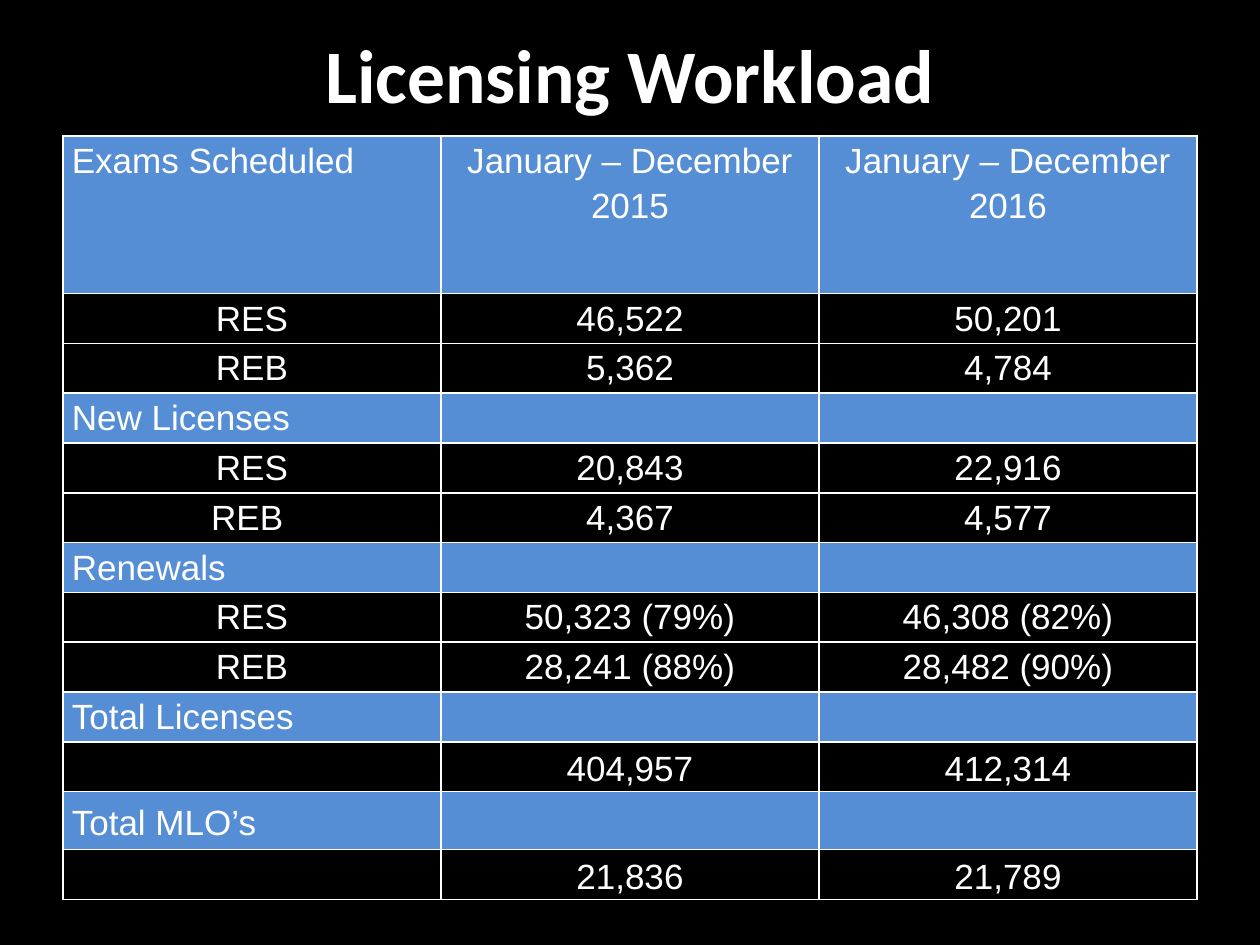
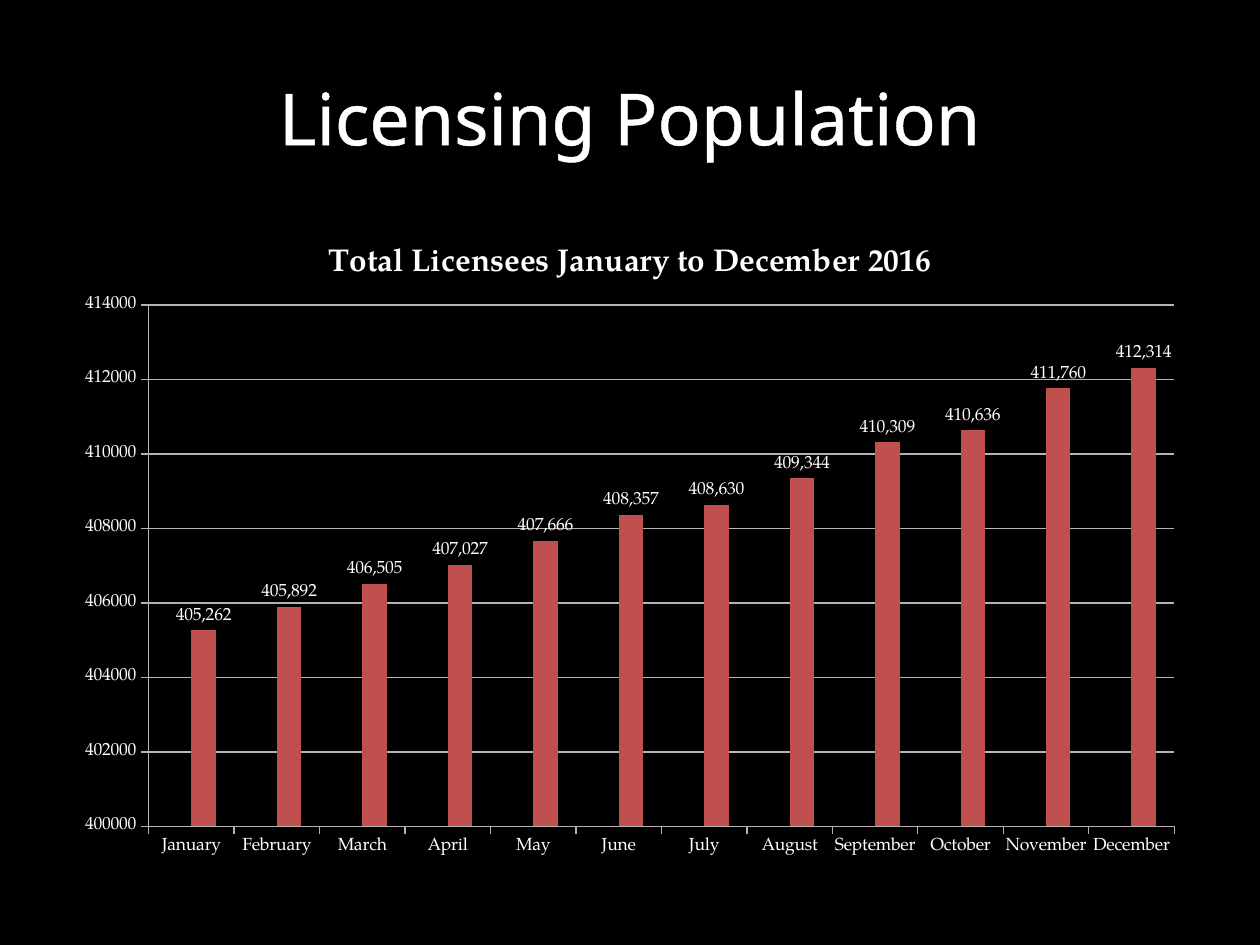
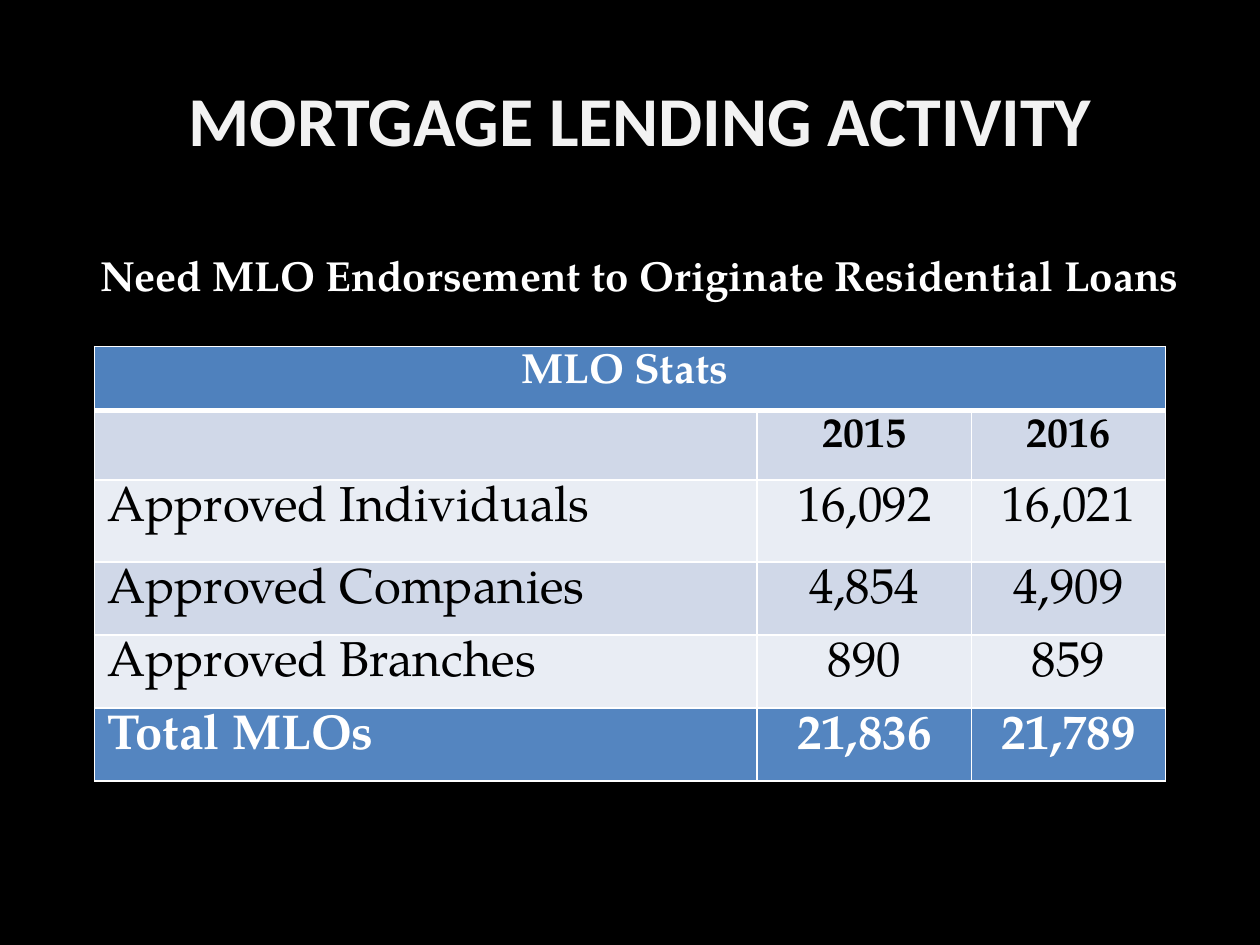
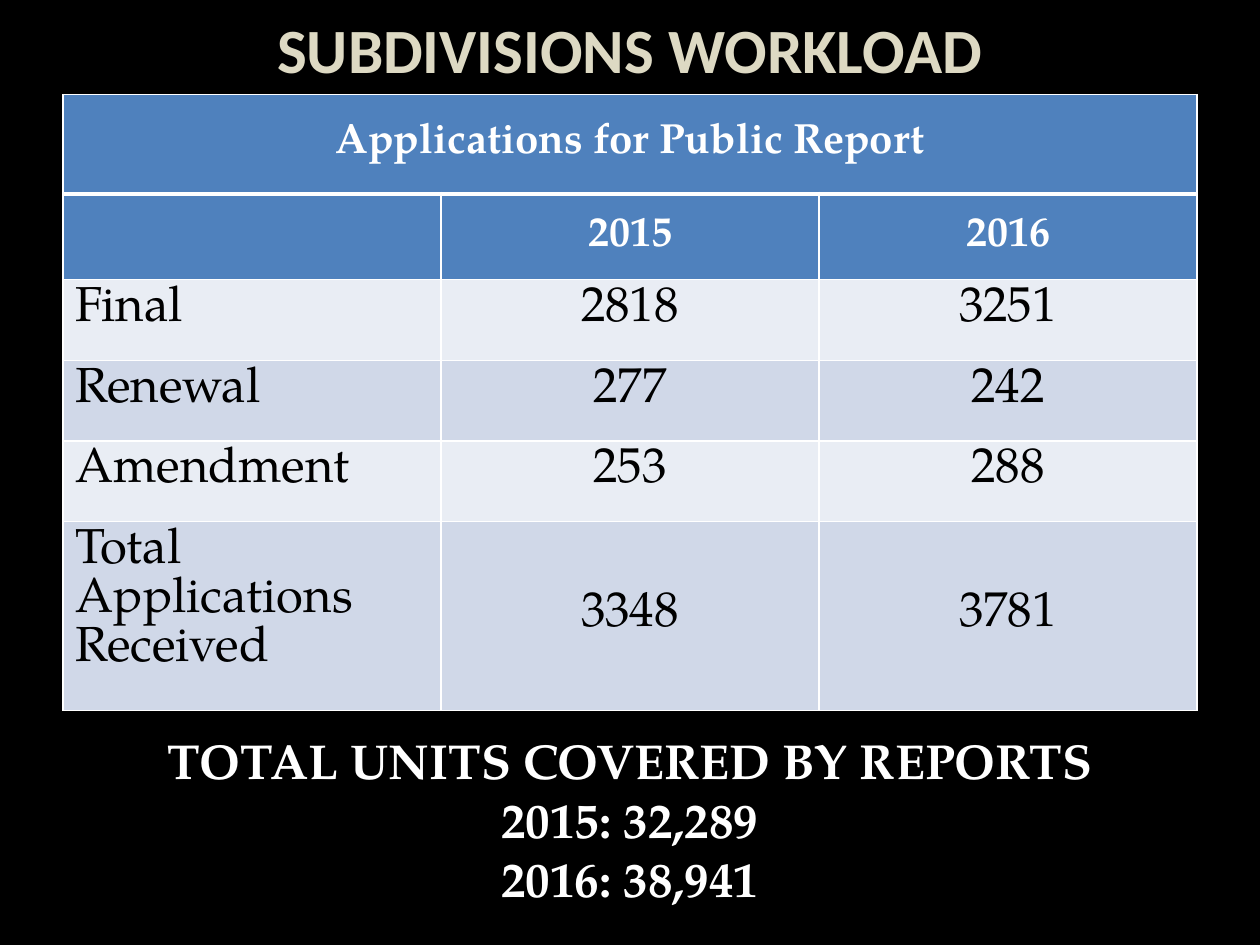
from dataclasses import dataclass, replace
from lxml import etree
from pptx import Presentation
from pptx.chart.data import CategoryChartData
from pptx.dml.color import RGBColor
from pptx.enum.chart import XL_CHART_TYPE, XL_LABEL_POSITION, XL_TICK_MARK
from pptx.enum.text import MSO_ANCHOR, MSO_AUTO_SIZE, PP_ALIGN
from pptx.oxml import parse_xml
from pptx.oxml.ns import nsdecls, qn
from pptx.util import Inches, Pt

BLACK = RGBColor(0x00, 0x00, 0x00)
WHITE = RGBColor(0xFF, 0xFF, 0xFF)
OFF_WHITE = RGBColor(0xF2, 0xF2, 0xF2)
TAN = RGBColor(0xDD, 0xD9, 0xC3)
SKY = RGBColor(0x55, 0x8E, 0xD5)
BLUE = RGBColor(0x4F, 0x81, 0xBD)
TOTAL_BLUE = RGBColor(0x54, 0x85, 0xC0)
BAND_DARK = RGBColor(0xD0, 0xD8, 0xE8)
BAND_LIGHT = RGBColor(0xE9, 0xED, 0xF4)
RED = RGBColor(0xC0, 0x50, 0x4D)
GRID = RGBColor(0xB3, 0xB3, 0xB3)

HEAD, SANS, SERIF = "Calibri", "Arial", "TeX Gyre Pagella"
LEFT, CENTER = PP_ALIGN.LEFT, PP_ALIGN.CENTER
TOP, MIDDLE = MSO_ANCHOR.TOP, MSO_ANCHOR.MIDDLE


@dataclass
class RowStyle:
    """Look of one table row; the label is its first cell."""
    fill: RGBColor = None
    size: float = 28
    color: RGBColor = BLACK
    bold: bool = False
    font: str = SERIF
    spacing: float = 1.0
    margins: tuple = (0.1, 0.05)
    label_align: int = LEFT
    label_anchor: int = TOP
    anchor: int = TOP


class Deck:
    def __init__(self):
        self.prs = Presentation()
        self.prs.slide_width, self.prs.slide_height = Inches(10), Inches(7.5)
        bg = self.prs.slide_master.background.fill
        bg.solid()
        bg.fore_color.rgb = BLACK
        self.s = None

    def slide(self):
        self.s = self.prs.slides.add_slide(self.prs.slide_layouts[6])

    def run(self, p, text, size, font, color, bold):
        r = p.add_run()
        r.text = text
        r.font.size, r.font.name, r.font.bold = Pt(size), font, bold
        r.font.color.rgb = color
        return r

    def text(self, box, lines, size, font=SERIF, color=WHITE, bold=True, anchor=TOP):
        sp = self.s.shapes.add_textbox(*map(Inches, box))
        tf = sp.text_frame
        tf.word_wrap, tf.vertical_anchor = True, anchor
        for i, line in enumerate(lines):
            p = tf.add_paragraph() if i else tf.paragraphs[0]
            p.alignment = CENTER
            self.run(p, line, size, font, color, bold)
        return tf

    def title(self, box, text, size, font=HEAD, color=WHITE, bold=True):
        return self.text(box, [text], size, font, color, bold, MIDDLE)

    def border(self, cell, **widths):
        tc_pr = cell._tc.get_or_add_tcPr()
        for i, side in enumerate("LRTB"):
            width = Pt(widths.get(side, 1))
            tc_pr.insert(i, parse_xml(
                f'<a:ln{side} {nsdecls("a")} w="{width}"><a:solidFill>'
                f'<a:srgbClr val="{WHITE}"/></a:solidFill></a:ln{side}>'))

    def cell(self, cell, text, style, align, anchor):
        if style.fill is None:
            cell.fill.background()
        else:
            cell.fill.solid()
            cell.fill.fore_color.rgb = style.fill
        side, end = map(Inches, style.margins)
        cell.margin_left = cell.margin_right = side
        cell.margin_top = cell.margin_bottom = end
        cell.vertical_anchor = anchor
        p = cell.text_frame.paragraphs[0]
        p.alignment, p.line_spacing = align, style.spacing
        if text:
            self.run(p, text, style.size, style.font, style.color, style.bold)

    def table(self, left, top, cols, heights, rows, banner=False):
        """Rows are (style, values); a banner merges the first row."""
        tbl = self.s.shapes.add_table(
            len(rows), len(cols), Inches(left), Inches(top),
            Inches(sum(cols)), Inches(sum(heights))).table
        tbl.first_row = tbl.horz_banding = False
        for col, width in zip(tbl.columns, cols):
            col.width = Inches(width)
        for row, height in zip(tbl.rows, heights):
            row.height = Inches(height)
        for i, (style, values) in enumerate(rows):
            for j, value in enumerate(values):
                cell = tbl.cell(i, j)
                label = j == 0 and not (banner and i == 0)
                self.cell(cell, value, style,
                          style.label_align if label else CENTER,
                          style.label_anchor if label else style.anchor)
                rule = {0: {"B": 3}, 1: {"T": 3}}.get(i, {}) if banner else {}
                self.border(cell, **rule)
        if banner:
            tbl.cell(0, 0).merge(tbl.cell(0, len(cols) - 1))

    def column_chart(self, box, title, cats, series, colors, scale, plot_box):
        data = CategoryChartData()
        data.categories = cats
        for name, values in series:
            data.add_series(name, values)
        chart = self.s.shapes.add_chart(
            XL_CHART_TYPE.COLUMN_CLUSTERED, *map(Inches, box), data).chart
        chart.has_legend = False
        chart.font.size, chart.font.name = Pt(10), SERIF
        chart.font.color.rgb = WHITE
        chart.has_title = True
        self.run(chart.chart_title.text_frame.paragraphs[0], title, 18, SERIF, WHITE, True)
        chart.chart_title.include_in_layout = False

        # Axes
        val, cat = chart.value_axis, chart.category_axis
        val.minimum_scale, val.maximum_scale, val.major_unit = scale
        val.tick_labels.number_format = "General"
        val.tick_labels.number_format_is_linked = False
        val.has_major_gridlines = True
        for axis in (val, cat):
            axis.major_tick_mark = XL_TICK_MARK.OUTSIDE
            axis.format.line.color.rgb = GRID
        val.major_gridlines.format.line.color.rgb = GRID

        # Columns
        plot = chart.plots[0]
        plot.gap_width, plot.overlap, plot.vary_by_categories = 150, 0, False
        for ser, color in zip(plot.series, colors):
            ser.format.fill.solid()
            ser.format.fill.fore_color.rgb = color
            labels = ser.data_labels
            labels.show_value = True
            labels.position = XL_LABEL_POSITION.OUTSIDE_END
            labels.number_format, labels.number_format_is_linked = "#,##0", False

        # Inner plot area, given in inches and stored as shares of the chart
        area = chart._chartSpace.find(".//" + qn("c:plotArea"))
        for old in area.findall(qn("c:layout")):
            area.remove(old)
        frame = etree.Element(qn("c:layout"))
        manual = etree.SubElement(frame, qn("c:manualLayout"))
        settings = [("layoutTarget", "inner"), ("xMode", "edge"), ("yMode", "edge")]
        shares = [length / whole for length, whole in zip(plot_box, box[2:] * 2)]
        for tag, value in settings + list(zip("xywh", shares)):
            etree.SubElement(manual, qn("c:" + tag)).set("val", str(value))
        area.insert(0, frame)


def licensing_workload(deck):
    deck.slide()
    deck.title((0.5, 0.17, 9, 0.83), "Licensing Workload", 43.2)
    data = RowStyle(size=20, color=WHITE, font=SANS, spacing=1.15,
                    margins=(0.07, 0), label_align=CENTER)
    band = replace(data, fill=SKY, label_align=LEFT)
    total = replace(data, anchor=MIDDLE)
    rows = [
        (band, ("Exams Scheduled", "January – December 2015", "January – December 2016")),
        (data, ("RES", "46,522", "50,201")),
        (data, ("REB", "5,362", "4,784")),
        (band, ("New Licenses", "", "")),
        (data, ("RES", "20,843", "22,916")),
        (data, ("REB ", "4,367", "4,577")),
        (band, ("Renewals", "", "")),
        (data, ("RES", "50,323 (79%)", "46,308 (82%)")),
        (data, ("REB", "28,241 (88%)", "28,482 (90%)")),
        (band, ("Total Licenses", "", "")),
        (total, ("", "404,957", "412,314")),
        (replace(band, label_anchor=MIDDLE), ("Total MLO’s", "", "")),
        (total, ("", "21,836", "21,789")),
    ]
    first, mlo, whole = 1.25, 0.46, 6.06
    plain = (whole - first - mlo) / (len(rows) - 2)
    heights = [first] + [plain] * 10 + [mlo, plain]
    deck.table(0.5, 1.08, [3] * 3, heights, rows)


def licensing_population(deck):
    deck.slide()
    tf = deck.title((0.5, 0.3, 9, 1.25), "Licensing Population", 41, "Noto Sans", bold=False)
    r_pr = tf.paragraphs[0].runs[0]._r.get_or_add_rPr()
    r_pr.insert(0, parse_xml(
        f'<a:ln {nsdecls("a")} w="{Pt(1.45)}"><a:solidFill>'
        f'<a:srgbClr val="{WHITE}"/></a:solidFill></a:ln>'))
    months = ("January", "February", "March", "April", "May", "June", "July",
              "August", "September", "October", "November", "December")
    licensees = (405262, 405892, 406505, 407027, 407666, 408357,
                 408630, 409344, 410309, 410636, 411760, 412314)
    deck.column_chart(
        (0.5, 1.75, 9, 5.15), "Total Licensees January to December 2016", months,
        [("Series 1", [None] * len(months)), ("Series 2", licensees)],
        (BLUE, RED), (400000, 414000, 2000), (0.68, 0.67, 8.14, 4.14))


def mortgage_lending(deck):
    deck.slide()
    deck.title((0.58, 0.54, 9, 0.8), "MORTGAGE LENDING ACTIVITY", 40, color=OFF_WHITE)
    deck.text((0.15, 1.88, 9.85, 0.6),
              ["Need MLO Endorsement to Originate Residential Loans"], 24, anchor=MIDDLE)
    head = RowStyle(fill=BLUE, size=24, color=WHITE, bold=True)
    dark, light = RowStyle(fill=BAND_DARK), RowStyle(fill=BAND_LIGHT)
    rows = [
        (head, ("MLO Stats ", "", "")),
        (replace(head, fill=BAND_DARK, color=BLACK), ("", "2015", "2016")),
        (light, ("Approved Individuals", "16,092", "16,021")),
        (dark, ("Approved Companies", "4,854", "4,909")),
        (light, ("Approved Branches", "890", "859")),
        (replace(head, fill=TOTAL_BLUE, size=28), ("Total MLOs", "21,836", "21,789")),
    ]
    deck.table(0.75, 2.75, [5.26, 1.7, 1.54], [0.51, 0.55, 0.65] + [0.58] * 3,
               rows, banner=True)


def subdivisions_workload(deck):
    deck.slide()
    deck.title((0.5, 0.02, 9, 0.73), "SUBDIVISIONS WORKLOAD", 36, color=TAN)
    head = RowStyle(fill=BLUE, size=24, color=WHITE, bold=True, anchor=MIDDLE)
    dark, light = RowStyle(fill=BAND_DARK), RowStyle(fill=BAND_LIGHT)
    rows = [
        (head, ("Applications for Public Report", "", "")),
        (head, ("", "2015", "2016")),
        (light, ("Final", "2818", "3251")),
        (dark, ("Renewal", "277", "242")),
        (light, ("Amendment", "253", "288")),
        (replace(dark, anchor=MIDDLE), ("Total Applications Received", "3348", "3781")),
    ]
    deck.table(0.5, 0.75, [3] * 3, [0.79, 0.68] + [0.64] * 3 + [1.5], rows, banner=True)
    tf = deck.text((1, 5.75, 8, 1.5),
                   ["TOTAL UNITS COVERED BY REPORTS", "2015: 32,289", "2016: 38,941"], 28)
    tf.auto_size = MSO_AUTO_SIZE.SHAPE_TO_FIT_TEXT


def main():
    deck = Deck()
    licensing_workload(deck)
    licensing_population(deck)
    mortgage_lending(deck)
    subdivisions_workload(deck)
    deck.prs.save("out.pptx")


if __name__ == "__main__":
    main()
